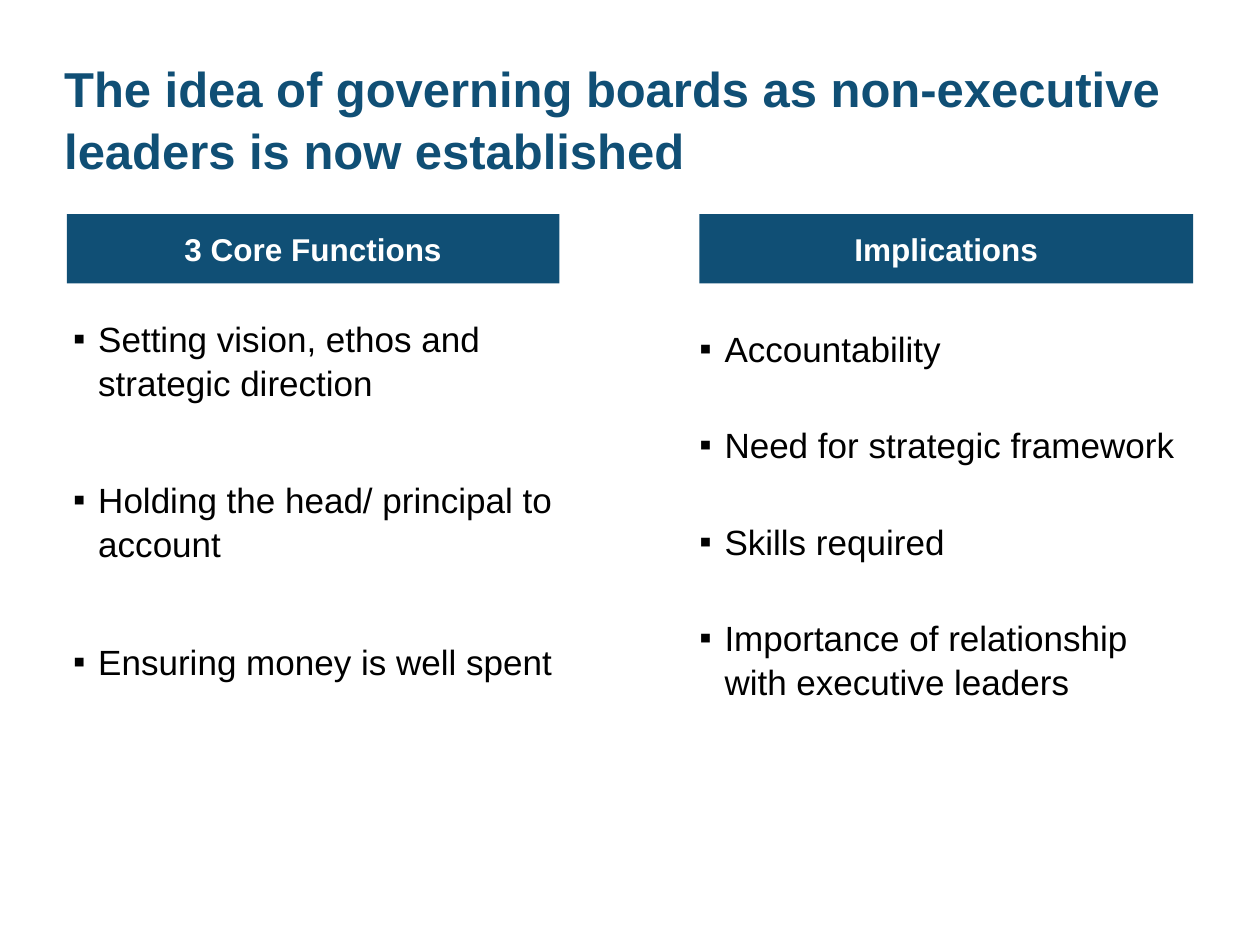
from lxml.etree import SubElement
from pptx import Presentation
from pptx.dml.color import RGBColor
from pptx.enum.shapes import MSO_SHAPE as Shape
from pptx.enum.text import MSO_ANCHOR as Anchor, PP_ALIGN as Align
from pptx.oxml.ns import qn
from pptx.util import Inches, Pt

BLUE, WHITE, BLACK = "104F75", "FFFFFF", "000000"


def rgb(code):
    return RGBColor.from_string(code)


def style(par, size, color, bold=False):
    font = par.font
    font.name, font.size, font.bold = "Arial", Pt(size), bold
    font.color.rgb = rgb(color)


def add_frame(slide, *box):
    """Return the wrapped text frame of a box without margins."""
    frame = slide.shapes.add_textbox(*map(Inches, box)).text_frame
    frame.word_wrap = True
    frame.margin_left = frame.margin_right = 0
    frame.margin_top = frame.margin_bottom = 0
    return frame


def add_title(slide, text):
    par = add_frame(slide, 0.51, 0.44, 9.36, 0.95).paragraphs[0]
    par.text = text
    par.line_spacing = 1.05
    style(par, 28, BLUE, True)


def add_header(slide, text, left, width):
    bar = slide.shapes.add_shape(
        Shape.RECTANGLE, Inches(left), Inches(1.7), Inches(width), Inches(0.55))
    bar.shadow.inherit = False
    bar.fill.solid()
    bar.fill.fore_color.rgb = rgb(BLUE)
    bar.line.fill.background()
    frame = bar.text_frame
    frame.word_wrap = False
    frame.vertical_anchor = Anchor.MIDDLE
    par = frame.paragraphs[0]
    par.text = text
    par.alignment = Align.CENTER
    style(par, 18, WHITE, True)


def add_bullets(slide, items, box, gap):
    frame = add_frame(slide, *box)
    for i, item in enumerate(items):
        par = frame.add_paragraph() if i else frame.paragraphs[0]
        par.text = item
        par.line_spacing = 1.05
        par.space_after = Pt(gap)
        props = par._p.get_or_add_pPr()
        props.set("marL", str(Inches(0.2)))
        props.set("indent", str(Inches(-0.2)))
        SubElement(props, qn("a:buFont"), typeface="Arial")
        SubElement(props, qn("a:buChar"), char="▪")
        style(par, 20, BLACK)


def main():
    prs = Presentation()
    prs.slide_width, prs.slide_height = Inches(10), Inches(7.5)
    slide = prs.slides.add_slide(prs.slide_layouts[6])
    add_title(slide, "The idea of governing boards as non-executive "
                     "leaders is now established")
    add_header(slide, "3 Core Functions", 0.53, 3.91)
    add_bullets(slide, [
        "Setting vision, ethos and strategic direction",
        "Holding the head/ principal to account",
        "Ensuring money is well spent",
    ], (0.58, 2.5, 3.87, 4.48), 42)
    add_header(slide, "Implications", 5.55, 3.92)
    add_bullets(slide, [
        "Accountability",
        "Need for strategic framework",
        "Skills required",
        "Importance of relationship with executive leaders",
    ], (5.55, 2.58, 3.92, 4.1), 30)
    prs.save("out.pptx")


if __name__ == "__main__":
    main()
